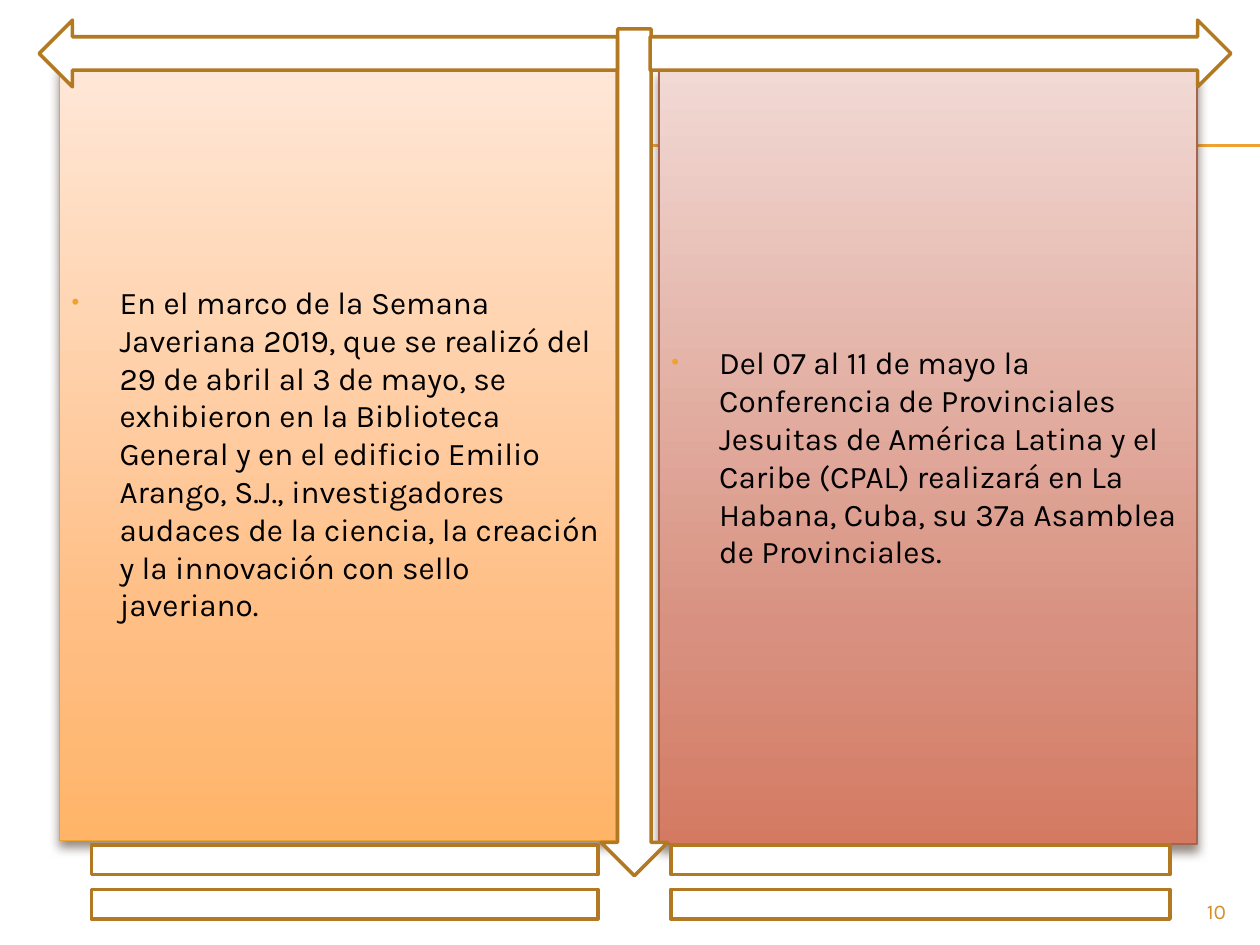
from copy import deepcopy
from lxml import etree
from pptx import Presentation, util as u
from pptx.dml.color import RGBColor
from pptx.enum import shapes, text
from pptx.oxml.ns import qn

ACCENT, BROWN = "F0A22E", "B27822"


def color(value):
    return RGBColor.from_string(value)


def add_xml(parent, tag, **attributes):
    return etree.SubElement(parent, qn(tag), attributes)


presentation = Presentation()
presentation.slide_width, presentation.slide_height = u.Inches(10), u.Inches(7.5)
slide = presentation.slides.add_slide(presentation.slide_layouts[6])

# Double rule behind the panels
for y in (1.15, 1.16):
    rule = slide.shapes.add_connector(
        shapes.MSO_CONNECTOR.STRAIGHT,
        u.Inches(0.56), u.Inches(y), u.Inches(10), u.Inches(y))
    rule.line.color.rgb = color(ACCENT)
    rule.line.width = u.Pt(0.75)
    add_xml(rule._element.spPr, "a:effectLst")

# Two gradient panels with a bulleted text each
panels = [
    ((0.47, 0.52, 4.42, 6.15), ("FFE7D7", "FFBE84", "FFB468"), ACCENT,
     "En el marco de la Semana Javeriana 2019, que se realizó del 29 de abril "
     "al 3 de mayo, se exhibieron en la Biblioteca General y en el edificio "
     "Emilio Arango, S.J., investigadores audaces de la ciencia, la creación "
     "y la innovación con sello javeriano."),
    ((5.23, 0.55, 4.27, 6.15), ("F1D9D4", "D89180", "D47A62"), "A5644E",
     "Del 07 al 11 de mayo la Conferencia de Provinciales Jesuitas de América "
     "Latina y el Caribe (CPAL) realizará en La Habana, Cuba, su 37ª Asamblea "
     "de Provinciales."),
]
for box, gradient, outline, wording in panels:
    panel = slide.shapes.add_shape(
        shapes.MSO_SHAPE.RECTANGLE, *map(u.Inches, box))
    panel.line.color.rgb = color(outline)
    panel.line.width = u.Pt(0.79)

    panel.fill.gradient()
    panel.fill.gradient_angle = 270
    properties = panel._element.spPr
    stop_list = properties.find(".//" + qn("a:gsLst"))
    stop_list.append(deepcopy(stop_list[-1]))
    for stop, position, shade in zip(panel.fill.gradient_stops, (0, 0.72, 1), gradient):
        stop.position = position
        stop.color.rgb = color(shade)

    panel.shadow.inherit = False
    shadow = add_xml(properties.find(qn("a:effectLst")), "a:outerShdw",
                     blurRad=str(u.Pt(6)), dist=str(u.Pt(4)),
                     dir="5400000", rotWithShape="0")
    shadow_color = add_xml(shadow, "a:srgbClr", val="4E3B30")
    add_xml(shadow_color, "a:alpha", val="60000")

    frame = panel.text_frame
    frame.word_wrap = True
    frame.vertical_anchor = text.MSO_ANCHOR.MIDDLE
    paragraph = frame.paragraphs[0]
    paragraph.text = wording
    paragraph.alignment = text.PP_ALIGN.LEFT
    paragraph.space_before = u.Pt(3.6)
    for name, value in {"name": "Karla", "size": u.Pt(18)}.items():
        setattr(paragraph.runs[0].font, name, value)
    paragraph.runs[0].font.color.rgb = color("000000")
    bullet = paragraph._p.get_or_add_pPr()
    bullet.set("marL", str(u.Inches(0.38)))
    bullet.set("indent", str(u.Inches(-0.38)))
    add_xml(add_xml(bullet, "a:buClr"), "a:srgbClr", val=ACCENT)
    add_xml(bullet, "a:buSzPct", val="70000")
    add_xml(bullet, "a:buFont", typeface="Arial")
    add_xml(bullet, "a:buChar", char="•")

# Arrows and equal signs that frame the panels
outlined = [
    (shapes.MSO_SHAPE.DOWN_ARROW, (4.77, 0.23, 0.53, 6.72)),
    (shapes.MSO_SHAPE.RIGHT_ARROW, (5.16, 0.16, 4.61, 0.53)),
    (shapes.MSO_SHAPE.LEFT_ARROW, (0.31, 0.16, 4.59, 0.53)),
    (shapes.MSO_SHAPE.MATH_EQUAL, (0, 6.5, 5.47, 1)),
    (shapes.MSO_SHAPE.MATH_EQUAL, (4.61, 6.5, 5.39, 1)),
]
for kind, box in outlined:
    shape = slide.shapes.add_shape(kind, *map(u.Inches, box))
    shape.shadow.inherit = False
    shape.fill.solid()
    shape.fill.fore_color.rgb = color("FFFFFF")
    shape.line.color.rgb = color(BROWN)
    shape.line.width = u.Pt(2)

# Slide number
number = slide.shapes.add_textbox(*map(u.Inches, (9, 7.08, 0.83, 0.27)))
number.text_frame.word_wrap = True
paragraph = number.text_frame.paragraphs[0]
paragraph.text = "10"
paragraph.alignment = text.PP_ALIGN.RIGHT
for name, value in {"name": "Karla", "size": u.Pt(12)}.items():
    setattr(paragraph.runs[0].font, name, value)
paragraph.runs[0].font.color.rgb = color("D48F29")

presentation.save("out.pptx")
